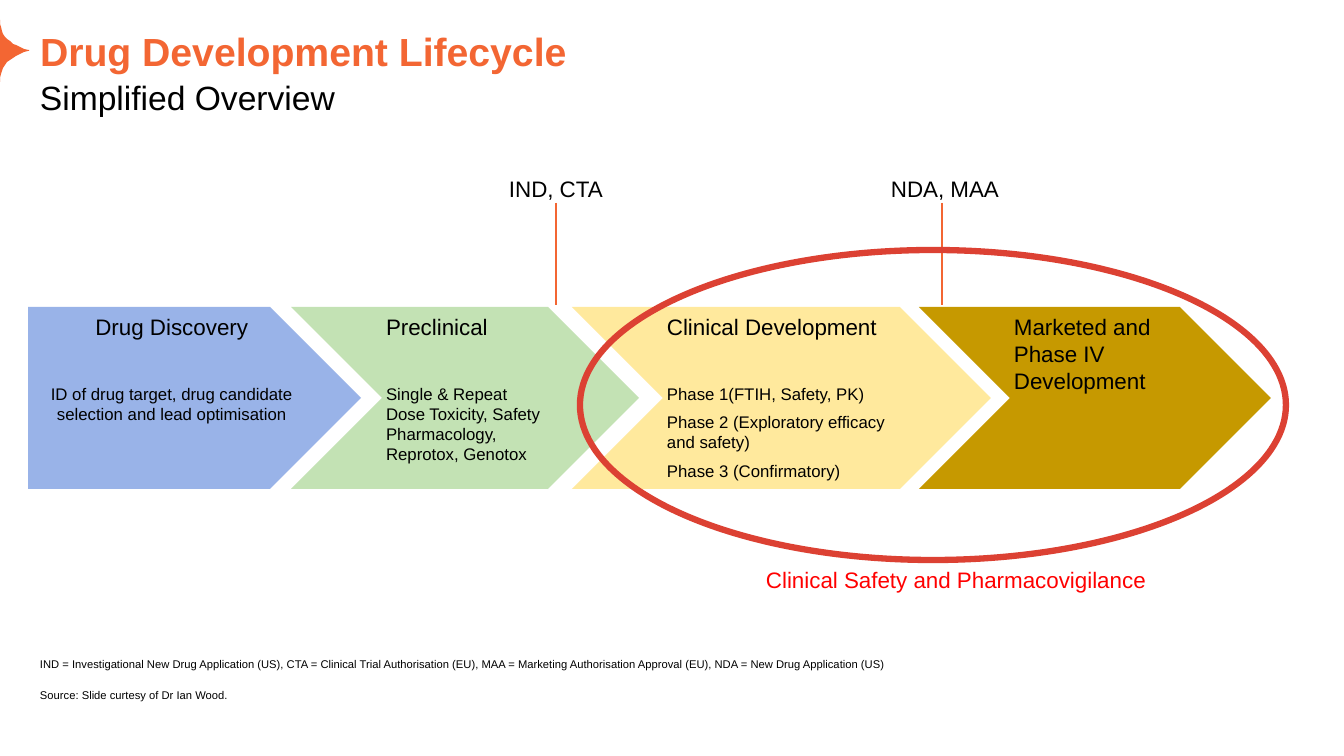
import dataclasses

import pptx
import pptx.dml.color
import pptx.enum.shapes
import pptx.enum.text
import pptx.oxml.ns
import pptx.util
from lxml import etree

SLIDE_SIZE = (1344, 756)
TITLE = ("Drug Development Lifecycle", (40, 27, 1263, 47))
SUBTITLE = ("Simplified Overview", (40, 77, 1263, 39))
STAGES = [
    ("Drug Discovery", ["ID of drug target, drug candidate selection and lead optimisation"],
     "homePlate", 28, 333, "99B3E8"),
    ("Preclinical", ["Single & Repeat Dose Toxicity, Safety Pharmacology, Reprotox, Genotox"],
     "chevron", 291, 348, "C3E2B4"),
    ("Clinical Development",
     ["Phase 1(FTIH, Safety, PK)", "Phase 2 (Exploratory efficacy and safety)",
      "Phase 3 (Confirmatory)"],
     "chevron", 572, 419, "FFE99D"),
    ("Marketed and Phase IV Development", [], "chevron", 919, 352, "C69900"),
]
STAGE_TOP, STAGE_HEIGHT = 307, 182
MILESTONES = [("IND, CTA", 505, 556), ("NDA, MAA", 887, 942)]
MILESTONE_TOP, MARKER_TOP, MARKER_BOTTOM = 169, 203, 305
SAFETY_RING = (580, 250, 706, 310)
SAFETY_LABEL = ("Clinical Safety and Pharmacovigilance", (762, 560, 400, 40))
FOOTNOTES = [
    ("IND = Investigational New Drug Application (US), CTA = Clinical Trial Authorisation (EU), "
     "MAA = Marketing Authorisation Approval (EU), NDA = New Drug Application (US)", 638),
    ("Source: Slide curtesy of Dr Ian Wood.", 669),
]
STAR_START = (0, 20)
STAR_CURVES = [
    ((0, 36), (10, 45), (28, 50)),
    ((29, 50), (29, 51), (28, 51)),
    ((10, 56), (0, 66), (0, 82)),
]
CURVE_STEPS = 12


@dataclasses.dataclass(frozen=True)
class Theme:
    font: str = "Arial"
    accent: str = "F36633"
    text: str = "000000"
    ring: str = "DC4133"
    alert: str = "FF0000"
    title: int = 28
    subtitle: int = 24
    heading: int = 16
    detail: int = 12
    note: int = 8


THEME = Theme()
KINDS = {"homePlate": pptx.enum.shapes.MSO_SHAPE.PENTAGON,
         "chevron": pptx.enum.shapes.MSO_SHAPE.CHEVRON}
ALIGN = pptx.enum.text.PP_ALIGN
ANCHOR = pptx.enum.text.MSO_ANCHOR


def px(n):
    return pptx.util.Emu(round(n * 914400 / 100.8))


def rgb(value):
    return pptx.dml.color.RGBColor.from_string(value)


def setup_frame(tf, inset=0, top=0, anchor=ANCHOR.TOP):
    tf.word_wrap = True
    tf.auto_size = pptx.enum.text.MSO_AUTO_SIZE.NONE
    tf.margin_left = tf.margin_right = tf.margin_bottom = px(inset)
    tf.margin_top = px(top)
    tf.vertical_anchor = anchor


def write(p, text, size, color=THEME.text, bold=False, align=ALIGN.LEFT, before=0, after=0):
    p.text = text
    p.alignment = align
    p.space_before = pptx.util.Pt(before)
    p.space_after = pptx.util.Pt(after)
    for r in p.runs:
        r.font.name = THEME.font
        r.font.size = pptx.util.Pt(size)
        r.font.bold = bold
        r.font.color.rgb = rgb(color)


def add_label(slide, text, box, size, color=THEME.text, inset=0, top=0, anchor=ANCHOR.TOP):
    tf = slide.shapes.add_textbox(*map(px, box)).text_frame
    setup_frame(tf, inset, top, anchor)
    write(tf.paragraphs[0], text, size, color)


def curve_points(start, curves):
    points = []
    for a, b, end in curves:
        for step in range(1, CURVE_STEPS + 1):
            t = step / CURVE_STEPS
            u = 1 - t
            points.append(tuple(u**3 * s + 3 * u * u * t * c + 3 * u * t * t * d + t**3 * e
                                for s, c, d, e in zip(start, a, b, end)))
        start = end
    return points


def add_star(slide):
    builder = slide.shapes.build_freeform(*STAR_START, scale=float(px(1)))
    builder.add_line_segments(curve_points(STAR_START, STAR_CURVES), close=True)
    sp = builder.convert_to_shape()
    sp.shadow.inherit = False
    sp.fill.solid()
    sp.fill.fore_color.rgb = rgb(THEME.accent)
    sp.line.fill.background()


def add_title(slide):
    text, box = TITLE
    sp = slide.shapes.title
    sp.left, sp.top, sp.width, sp.height = map(px, box)
    setup_frame(sp.text_frame, anchor=ANCHOR.BOTTOM)
    write(sp.text_frame.paragraphs[0], text, THEME.title, THEME.accent, True)


def add_stage(slide, heading, details, kind, left, width, color):
    sp = slide.shapes.add_shape(KINDS[kind], px(left), px(STAGE_TOP), px(width), px(STAGE_HEIGHT))
    sp.shadow.inherit = False
    sp.fill.solid()
    sp.fill.fore_color.rgb = rgb(color)
    sp.line.fill.background()
    tf = sp.text_frame
    setup_frame(tf, inset=4, top=6)
    align = ALIGN.CENTER if kind == "homePlate" else ALIGN.LEFT
    write(tf.paragraphs[0], heading, THEME.heading, align=align, after=3)
    for i, detail in enumerate(details):
        write(tf.add_paragraph(), detail, THEME.detail, align=align,
              before=3 if i else 28, after=3)


def add_marker(slide, x):
    line = slide.shapes.add_connector(pptx.enum.shapes.MSO_CONNECTOR.STRAIGHT,
                                      px(x), px(MARKER_TOP), px(x), px(MARKER_BOTTOM))
    line.line.color.rgb = rgb(THEME.accent)
    line.line.width = pptx.util.Pt(1.5)
    etree.SubElement(line._element.spPr, pptx.oxml.ns.qn("a:effectLst"))


def add_ring(slide):
    sp = slide.shapes.add_shape(pptx.enum.shapes.MSO_SHAPE.OVAL, *map(px, SAFETY_RING))
    sp.shadow.inherit = False
    sp.fill.background()
    sp.line.color.rgb = rgb(THEME.ring)
    sp.line.width = pptx.util.Pt(4.5)


def main():
    prs = pptx.Presentation()
    prs.slide_width, prs.slide_height = map(px, SLIDE_SIZE)
    slide = prs.slides.add_slide(prs.slide_layouts[5])
    add_star(slide)
    add_title(slide)
    add_label(slide, *SUBTITLE, THEME.subtitle)
    for stage in STAGES:
        add_stage(slide, *stage)
    for text, left, x in MILESTONES:
        add_marker(slide, x)
        add_label(slide, text, (left, MILESTONE_TOP, 130, 34), THEME.heading, inset=4, top=6)
    add_label(slide, *SAFETY_LABEL, THEME.heading, THEME.alert, inset=4, top=6)
    add_ring(slide)
    for text, top in FOOTNOTES:
        add_label(slide, text, (40, top, 1263, 33), THEME.note, anchor=ANCHOR.BOTTOM)
    prs.save("out.pptx")


if __name__ == "__main__":
    main()
